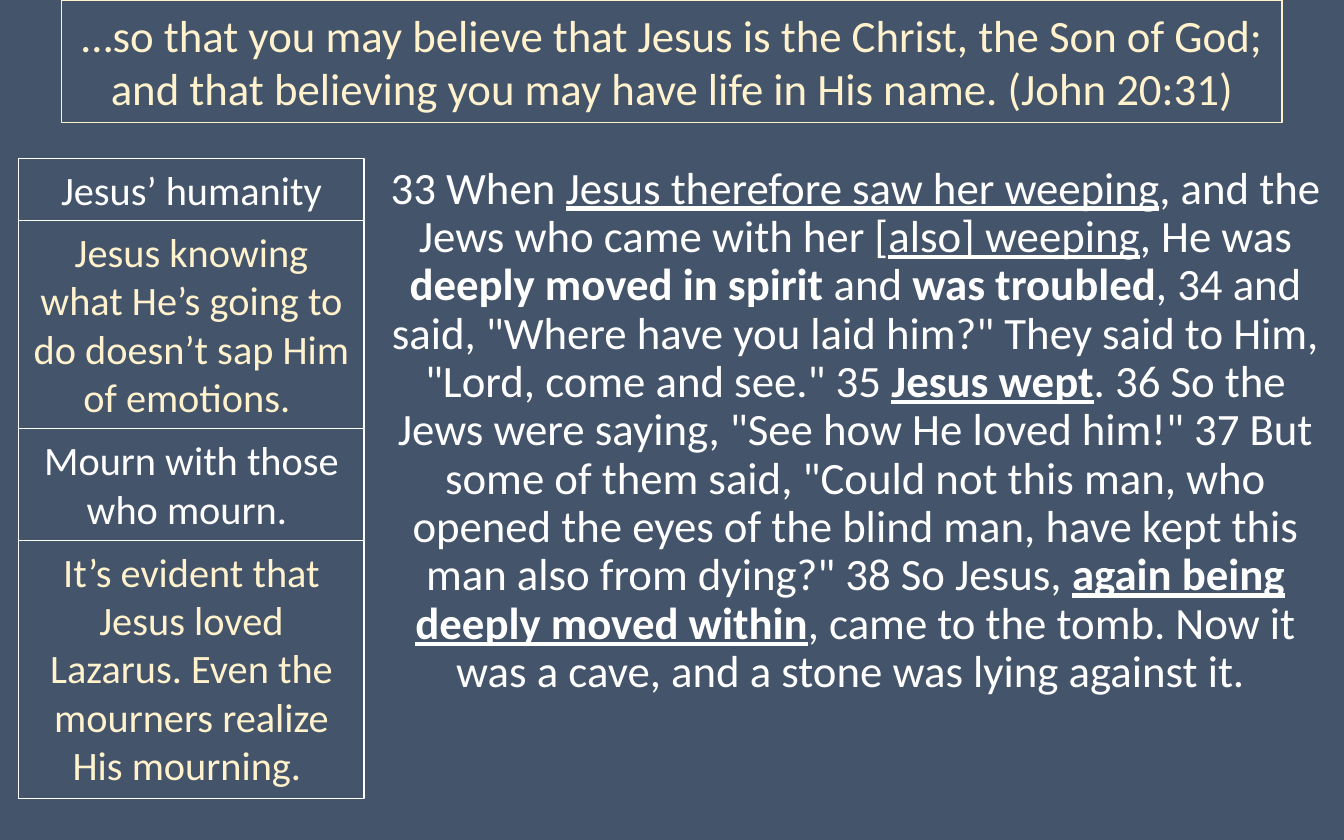
from dataclasses import dataclass

import pptx
import pptx.dml.color
import pptx.enum.shapes
import pptx.enum.text
import pptx.oxml
import pptx.slide
import pptx.text.text
import pptx.util
from pptx.util import Inches

FONT = "Calibri"
WHITE = "FFFFFF"
CREAM = "FFF2CC"
SLATE = "44546A"


@dataclass
class Span:
    text: str
    bold: bool = False
    underline: bool = False


@dataclass
class Panel:
    text: str
    left: float
    top: float
    width: float
    height: float
    text_color: str
    line_color: str
    size: float
    anchor: pptx.enum.text.MSO_ANCHOR = pptx.enum.text.MSO_ANCHOR.TOP


def rgb(color: str) -> pptx.dml.color.RGBColor:
    return pptx.dml.color.RGBColor.from_string(color)


def add_span(para: pptx.text.text._Paragraph, span: Span, size: float, color: str) -> None:
    run = para.add_run()
    run.text = span.text
    run.font.name = FONT
    run.font.size = pptx.util.Pt(size)
    run.font.bold = span.bold
    run.font.underline = span.underline
    run.font.color.rgb = rgb(color)


def add_panel(page: pptx.slide.Slide, panel: Panel) -> None:
    box = page.shapes.add_shape(
        pptx.enum.shapes.MSO_SHAPE.RECTANGLE,
        Inches(panel.left), Inches(panel.top), Inches(panel.width), Inches(panel.height),
    )
    box.shadow.inherit = False
    box.fill.background()
    box.line.color.rgb = rgb(panel.line_color)
    box.line.width = pptx.util.Pt(0.75)
    frame = box.text_frame
    frame.word_wrap = True
    frame.auto_size = pptx.enum.text.MSO_AUTO_SIZE.SHAPE_TO_FIT_TEXT
    frame.vertical_anchor = panel.anchor
    para = frame.paragraphs[0]
    para.alignment = pptx.enum.text.PP_ALIGN.CENTER
    add_span(para, Span(panel.text), panel.size, panel.text_color)


def fill_passage(page: pptx.slide.Slide, spans: list[Span]) -> None:
    """Place the body placeholder and write the passage without a bullet."""
    body = page.placeholders[1]
    body.left, body.top = Inches(2.73), Inches(1.18)
    body.width, body.height = Inches(7.27), Inches(5.07)
    frame = body.text_frame
    frame.word_wrap = True
    frame.auto_size = pptx.enum.text.MSO_AUTO_SIZE.NONE
    frame.vertical_anchor = pptx.enum.text.MSO_ANCHOR.TOP
    para = frame.paragraphs[0]
    para.alignment = pptx.enum.text.PP_ALIGN.CENTER
    para.line_spacing = 0.9
    para.space_before = pptx.util.Pt(7.5)
    properties = para._p.get_or_add_pPr()
    properties.set("marL", "0")
    properties.set("indent", "0")
    properties.append(pptx.oxml.parse_xml(
        '<a:buNone xmlns:a="http://schemas.openxmlformats.org/drawingml/2006/main"/>'
    ))
    for span in spans:
        add_span(para, span, 24, WHITE)


PASSAGE = [
    Span("33 When "),
    Span("Jesus therefore saw her weeping", underline=True),
    Span(", and the Jews who came with her ["),
    Span("also] weeping", underline=True),
    Span(", He was "),
    Span("deeply moved in spirit ", bold=True),
    Span("and "),
    Span("was troubled", bold=True),
    Span(', 34 and said, "Where have you laid him?" They said to Him, '
         '"Lord, come and see." 35 '),
    Span("Jesus wept", bold=True, underline=True),
    Span('. 36 So the Jews were saying, "See how He loved him!" 37 But some of them said, '
         '"Could not this man, who opened the eyes of the blind man, have kept this man '
         'also from dying?" 38 So Jesus, '),
    Span("again being deeply moved within", bold=True, underline=True),
    Span(", came to the tomb. Now it was a cave, and a stone was lying against it. "),
]

BANNER = Panel(
    "…so that you may believe that Jesus is the Christ, the Son of God; "
    "and that believing you may have life in His name. (John 20:31)",
    0.46, 0, 9.08, 0.91, CREAM, CREAM, 24, pptx.enum.text.MSO_ANCHOR.MIDDLE,
)

# Text and height of each stacked note; text colours alternate.
NOTES = [
    ("Jesus’ humanity", 0.46),
    ("Jesus knowing what He’s going to do doesn’t sap Him of emotions. ", 1.55),
    ("Mourn with those who mourn. ", 0.83),
    ("It’s evident that Jesus loved Lazarus. Even the mourners realize His mourning. ", 1.92),
]


def main() -> None:
    deck = pptx.Presentation()
    deck.slide_width, deck.slide_height = Inches(10), Inches(6.25)
    page = deck.slides.add_slide(deck.slide_layouts[1])
    page.background.fill.solid()
    page.background.fill.fore_color.rgb = rgb(SLATE)
    title = page.shapes.title.element
    title.getparent().remove(title)

    fill_passage(page, PASSAGE)
    add_panel(page, BANNER)
    top = 1.18
    for index, (text, height) in enumerate(NOTES):
        color = CREAM if index % 2 else WHITE
        add_panel(page, Panel(text, 0.14, top, 2.57, height, color, WHITE, 21.6))
        top += height

    deck.save("out.pptx")


if __name__ == "__main__":
    main()
